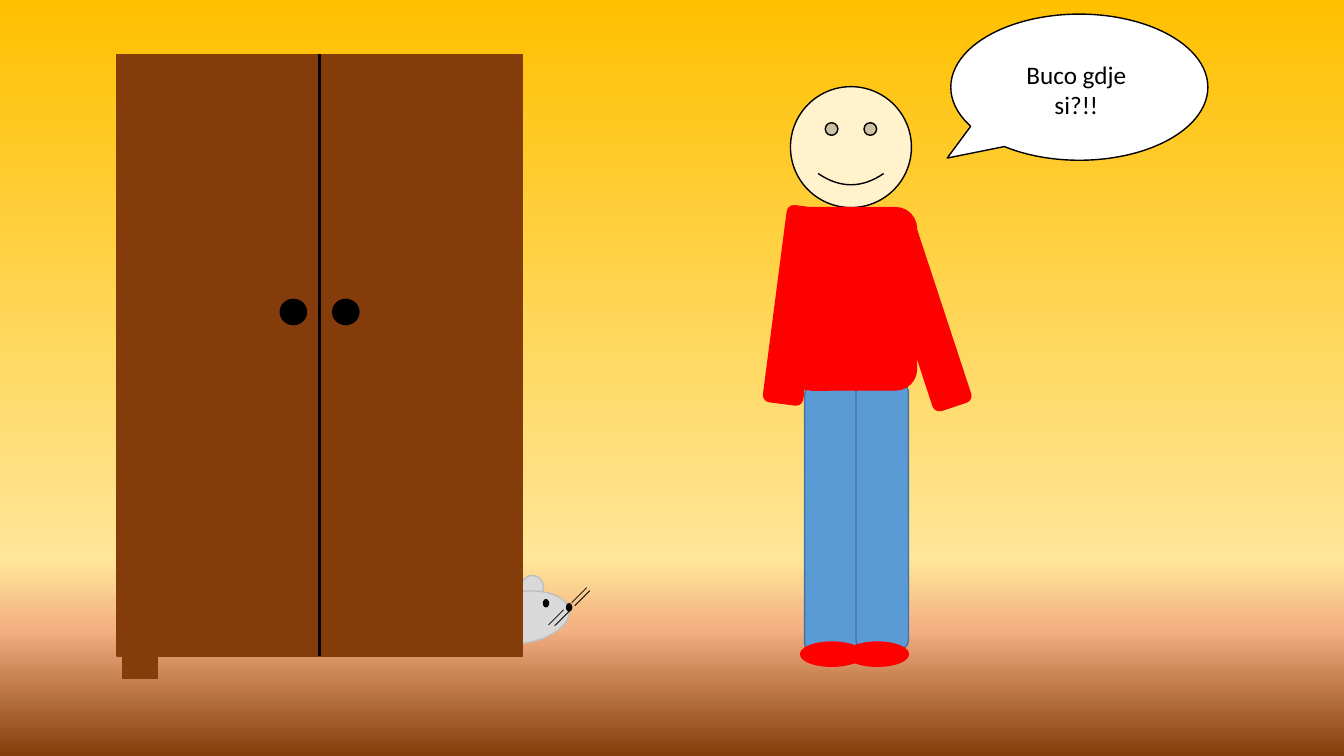
from lxml import etree
from pptx import Presentation
from pptx.dml.color import RGBColor
from pptx.enum.shapes import MSO_CONNECTOR, MSO_SHAPE
from pptx.enum.text import PP_ALIGN
from pptx.oxml.ns import qn
from pptx.util import Inches, Pt

OVAL, BOX, ROUNDED = MSO_SHAPE.OVAL, MSO_SHAPE.RECTANGLE, MSO_SHAPE.ROUNDED_RECTANGLE
SMILEY, BUBBLE = MSO_SHAPE.SMILEY_FACE, MSO_SHAPE.OVAL_CALLOUT
STRAIGHT = MSO_CONNECTOR.STRAIGHT
BLACK, BROWN, RED = "000000", "843C0B", "FF0000"
GREY, GREY_EDGE, BLUE, BLUE_EDGE = "D9D9D9", "BFBFBF", "5B9BD5", "43739E"

# Content: shapes are (kind, left, top, width, height, fill, edge, rotation), in inches
SPEECH = "Buco gdje si?!!"
BACKDROP = [(0, "FFC000"), (74, "FFE699"), (83, "F4B183"), (100, BROWN)]

MOUSE = [
    (OVAL, 5.17, 5.71, 0.22, 0.23, GREY, GREY_EDGE, 0),
    (OVAL, 4.71, 5.87, 0.94, 0.51, GREY, GREY_EDGE, 350.9),
] + [(OVAL, left, top, 0.05, 0.07, BLACK, BLACK, 0) for left, top in [(5.39, 5.95), (5.62, 5.99)]]
WHISKER = 0.15
WHISKER_STARTS = [(5.67, 5.98), (5.7, 6.01), (5.44, 6.2), (5.5, 6.21)]

LEFT, TOP, WIDTH, HEIGHT = 1.16, 0.54, 4.02, 5.97
MIDDLE, FLOOR = LEFT + WIDTH / 2, TOP + HEIGHT
KNOB, KNOB_OFFSET = 0.26, 0.26
WARDROBE = [(BOX, LEFT, TOP, WIDTH, HEIGHT, BROWN, BROWN, 0)]
KNOBS_AND_FOOT = [
    (OVAL, MIDDLE + side * KNOB_OFFSET - KNOB / 2, 2.97, KNOB, 0.25, BLACK, BLACK, 0)
    for side in (1, -1)
] + [(BOX, LEFT + 0.06, FLOOR, 0.34, 0.22, BROWN, BROWN, 0)]

PERSON = [
    (ROUNDED, 7.98, 3.83, 0.52, 2.64, BLUE, BLUE_EDGE, 0),
    (ROUNDED, 8.49, 3.8, 0.52, 2.64, BLUE, BLUE_EDGE, 0),
    (SMILEY, 7.84, 0.86, 1.2, 1.2, "FFF2CC", BLACK, 0),
    (ROUNDED, 7.84, 2.06, 1.25, 1.81, RED, RED, 0),
    (ROUNDED, 7.69, 2.05, 0.39, 1.96, RED, RED, 7.4),
    (ROUNDED, 8.96, 2.12, 0.39, 1.96, RED, RED, 341.8),
] + [(OVAL, left, 6.37, 0.62, 0.24, RED, RED, 0) for left in (7.94, 8.39)]


def color(value):
    return RGBColor.from_string(value)


def draw(shapes, kind, left, top, width, height, fill, edge, rotation):
    shape = shapes.add_shape(kind, *map(Inches, (left, top, width, height)))
    shape.shadow.inherit = False
    shape.fill.solid()
    shape.fill.fore_color.rgb = color(fill)
    shape.line.color.rgb = color(edge)
    shape.line.width = Pt(1)
    shape.rotation = rotation
    return shape


def draw_line(shapes, start, end, weight):
    line = shapes.add_connector(STRAIGHT, *map(Inches, (*start, *end)))
    line.line.color.rgb = color(BLACK)
    line.line.width = Pt(weight)
    etree.SubElement(line._element.spPr, qn("a:effectLst"))


def draw_all(shapes, parts):
    for part in parts:
        draw(shapes, *part)


def paint_backdrop(slide):
    fill = slide.background.fill
    fill.gradient()
    fill.gradient_angle = 270
    stops = slide._element.find(".//" + qn("a:gsLst"))
    for stop in list(stops):
        stops.remove(stop)
    for percent, value in BACKDROP:
        stop = etree.SubElement(stops, qn("a:gs"), pos=str(percent * 1000))
        etree.SubElement(stop, qn("a:srgbClr"), val=value)


def main():
    presentation = Presentation()
    presentation.slide_width, presentation.slide_height = Inches(13.33), Inches(7.5)
    slide = presentation.slides.add_slide(presentation.slide_layouts[6])
    paint_backdrop(slide)

    # Mouse behind the wardrobe
    mouse = slide.shapes.add_group_shape().shapes
    draw_all(mouse, MOUSE)
    for x, y in WHISKER_STARTS:
        draw_line(mouse, (x, y), (x + WHISKER, y - WHISKER), 0.5)

    # Wardrobe
    wardrobe = slide.shapes.add_group_shape().shapes
    draw_all(wardrobe, WARDROBE)
    draw_line(wardrobe, (MIDDLE, TOP), (MIDDLE, FLOOR), 2.25)
    draw_all(wardrobe, KNOBS_AND_FOOT)

    # Person
    draw_all(slide.shapes.add_group_shape().shapes, PERSON)

    # Speech bubble
    bubble = draw(slide.shapes, BUBBLE, 9.43, 0.14, 2.55, 1.45, "FFFFFF", BLACK, 0)
    bubble.adjustments[0], bubble.adjustments[1] = -0.514, 0.485
    speech = slide.shapes.add_textbox(*map(Inches, (9.92, 0.54, 1.51, 0.71))).text_frame
    speech.word_wrap = True
    paragraph = speech.paragraphs[0]
    paragraph.text = SPEECH
    paragraph.alignment = PP_ALIGN.CENTER
    paragraph.font.name = "Calibri"
    paragraph.font.size = Pt(18)
    paragraph.font.color.rgb = color(BLACK)

    presentation.save("out.pptx")


if __name__ == "__main__":
    main()
